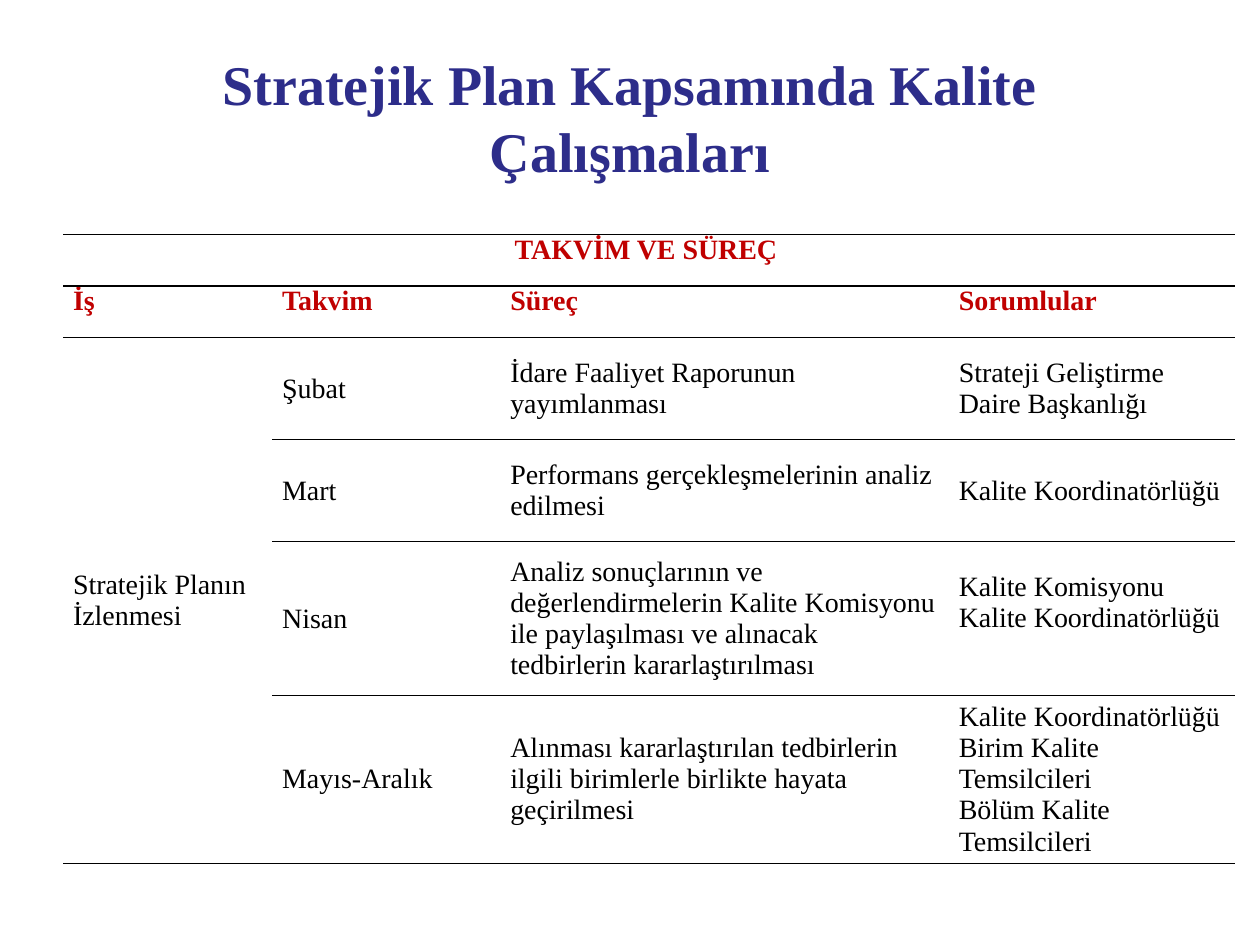
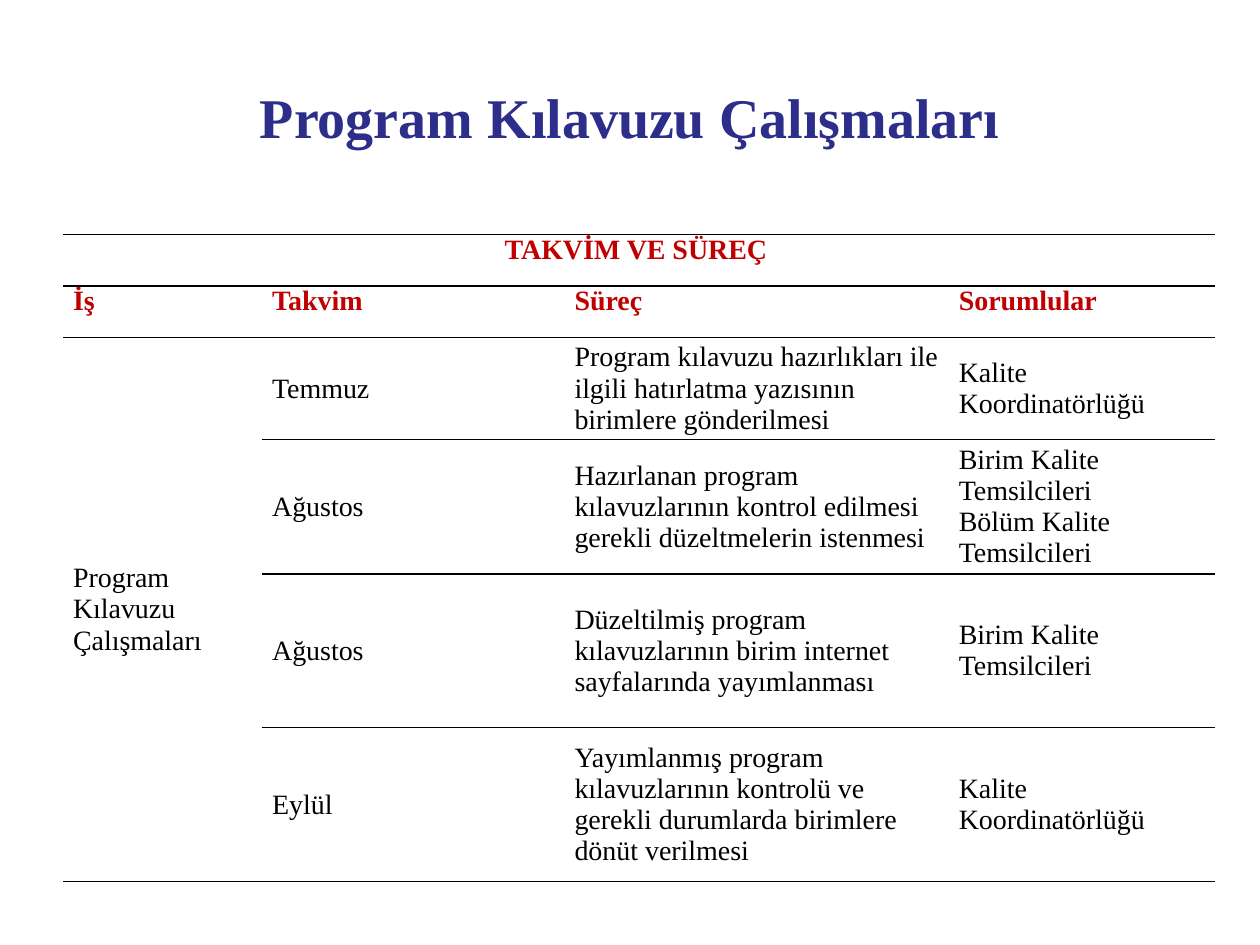
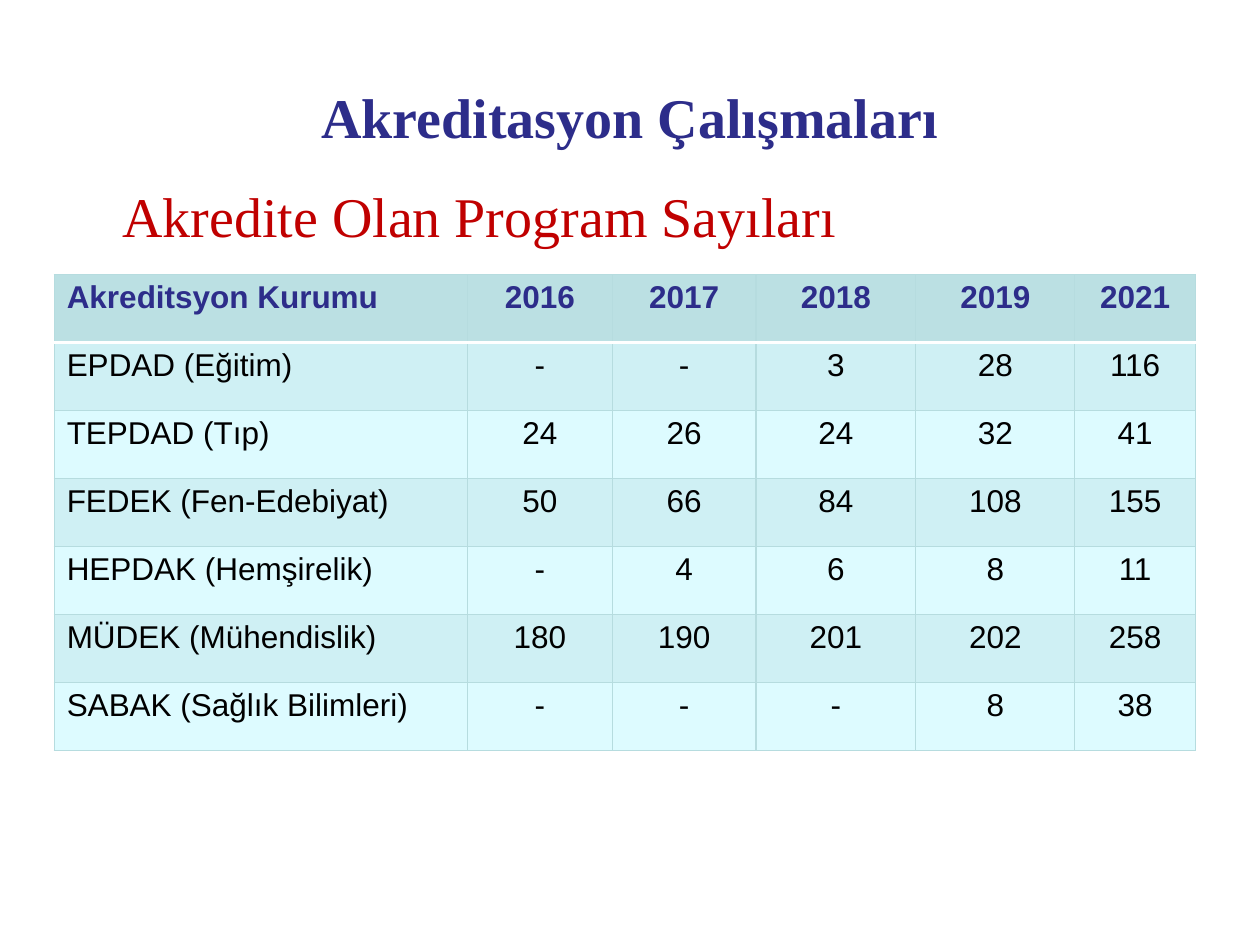
from lxml import etree
from pptx import Presentation, util as u
from pptx.dml.color import RGBColor
from pptx.enum import text as t
from pptx.oxml import ns

# Shared look
NAVY = RGBColor(0x2D, 0x2D, 0x8A)
RED = RGBColor(0xC0, 0x00, 0x00)
BLACK = RGBColor(0x00, 0x00, 0x00)
WHITE = RGBColor(0xFF, 0xFF, 0xFF)
TEAL = RGBColor(0xBB, 0xE0, 0xE3)
TEAL_LINE = RGBColor(0xB6, 0xDC, 0xDF)
BAND_DARK = RGBColor(0xCF, 0xF0, 0xF4)
BAND_LIGHT = RGBColor(0xDD, 0xFB, 0xFF)
SERIF, SANS = "Times New Roman", "Arial"
LEFT, CENTER, JUSTIFY = t.PP_ALIGN.LEFT, t.PP_ALIGN.CENTER, t.PP_ALIGN.JUSTIFY
TOP, MIDDLE = t.MSO_ANCHOR.TOP, t.MSO_ANCHOR.MIDDLE
SLIDE_W, SLIDE_H = 10, 7.5
MARGIN = 0.05 * SLIDE_W

# Content: calendars
CALENDAR_TITLE = "TAKVİM VE SÜREÇ "
CALENDAR_HEADS = ["İş", "Takvim ", "Süreç", "Sorumlular"]
CALENDAR_ROWS = [0.41, 0.41, 0.81, 0.81, 1.22, 1.22]
COORDINATOR = "Kalite Koordinatörlüğü"
UNIT_REPS = "Birim Kalite Temsilcileri"
DEPARTMENT_REPS = "Bölüm Kalite Temsilcileri"
CALENDARS = [
    dict(
        title="Stratejik Plan Kapsamında Kalite Çalışmaları",
        columns=[1.66, 1.81, 3.56, 2.27],
        job="Stratejik Planın İzlenmesi",
        raised="Nisan",
        steps=[
            ("Şubat", "İdare Faaliyet Raporunun yayımlanması",
             ["Strateji Geliştirme Daire Başkanlığı"]),
            ("Mart", "Performans gerçekleşmelerinin analiz edilmesi", [COORDINATOR]),
            ("Nisan", "Analiz sonuçlarının ve değerlendirmelerin Kalite Komisyonu ile "
             "paylaşılması ve alınacak tedbirlerin kararlaştırılması",
             ["Kalite Komisyonu", COORDINATOR]),
            ("Mayıs-Aralık", "Alınması kararlaştırılan tedbirlerin ilgili birimlerle "
             "birlikte hayata geçirilmesi",
             [COORDINATOR, UNIT_REPS, DEPARTMENT_REPS]),
        ],
    ),
    dict(
        title="Program Kılavuzu Çalışmaları",
        columns=[1.58, 2.4, 3.05, 2.11],
        job="Program Kılavuzu Çalışmaları",
        raised=None,
        steps=[
            ("Temmuz", "Program kılavuzu hazırlıkları ile ilgili hatırlatma yazısının "
             "birimlere gönderilmesi", [COORDINATOR]),
            ("Ağustos", "Hazırlanan program kılavuzlarının kontrol edilmesi gerekli "
             "düzeltmelerin istenmesi", [UNIT_REPS, DEPARTMENT_REPS]),
            ("Ağustos", "Düzeltilmiş program kılavuzlarının birim internet sayfalarında "
             "yayımlanması", [UNIT_REPS]),
            ("Eylül", "Yayımlanmış program kılavuzlarının kontrolü ve gerekli durumlarda "
             "birimlere dönüt verilmesi", [COORDINATOR]),
        ],
    ),
]

# Content: accreditation
ACCREDITATION_TITLE = "Akreditasyon Çalışmaları"
ACCREDITATION_SUBTITLE = "Akredite Olan Program Sayıları"
ACCREDITATION_COLUMNS = [3.28, 1.15, 1.14, 1.27, 1.26, 0.96]
ACCREDITATION = [
    ("Akreditsyon Kurumu", 2016, 2017, 2018, 2019, 2021),
    ("EPDAD (Eğitim)", "-", "-", 3, 28, 116),
    ("TEPDAD (Tıp)", 24, 26, 24, 32, 41),
    ("FEDEK (Fen-Edebiyat)", 50, 66, 84, 108, 155),
    ("HEPDAK (Hemşirelik)", "-", 4, 6, 8, 11),
    ("MÜDEK (Mühendislik)", 180, 190, 201, 202, 258),
    ("SABAK (Sağlık Bilimleri)", "-", "-", "-", 8, 38),
]


def write(frame, content, size=16, font=SERIF, color=BLACK, bold=False,
          align=LEFT, before=None):
    """Fill a text frame with one line or a list of lines."""
    lines = content if isinstance(content, list) else [content]
    frame.word_wrap = True
    for i, line in enumerate(lines):
        paragraph = frame.paragraphs[0] if i == 0 else frame.add_paragraph()
        paragraph.alignment = align
        paragraph.space_before = before
        run = paragraph.add_run()
        run.text = str(line)
        run.font.size, run.font.name, run.font.bold = u.Pt(size), font, bold
        run.font.color.rgb = color


def add_text(slide, content, left, top, width, height, anchor=TOP, inset=0.1, **style):
    box = slide.shapes.add_textbox(*map(u.Inches, (left, top, width, height)))
    frame = box.text_frame
    frame.vertical_anchor = anchor
    frame.margin_left = frame.margin_right = u.Inches(inset)
    write(frame, content, **style)


def add_titled_slide(deck, title):
    slide = deck.slides.add_slide(deck.slide_layouts[6])
    add_text(slide, title, MARGIN, 0.04 * SLIDE_H, SLIDE_W - 2 * MARGIN, SLIDE_H / 6,
             anchor=MIDDLE, inset=0.15, size=32, color=NAVY, bold=True, align=CENTER)
    return slide


def add_grid(slide, left, top, columns, rows):
    table = slide.shapes.add_table(
        len(rows), len(columns),
        *map(u.Inches, (left, top, sum(columns), sum(rows)))).table
    table.first_row = table.horz_banding = False
    for column, width in zip(table.columns, columns):
        column.width = u.Inches(width)
    for row, height in zip(table.rows, rows):
        row.height = u.Inches(height)
    return table


def set_borders(cell, **sides):
    """Draw sides L, R, T, B given as (colour, points); None hides one."""
    properties = cell._tc.get_or_add_tcPr()
    for i, side in enumerate("LRTB"):
        line = etree.Element(ns.qn(f"a:ln{side}"))
        if sides.get(side):
            color, points = sides[side]
            line.set("w", str(u.Pt(points)))
            fill = etree.SubElement(line, ns.qn("a:solidFill"))
            etree.SubElement(fill, ns.qn("a:srgbClr"), val=str(color))
        else:
            etree.SubElement(line, ns.qn("a:noFill"))
        properties.insert(i, line)


def add_calendar(deck, calendar):
    slide = add_titled_slide(deck, calendar["title"])
    table = add_grid(slide, MARGIN, 1.86, calendar["columns"], CALENDAR_ROWS)
    last_row = len(CALENDAR_ROWS) - 1
    table.cell(0, 0).merge(table.cell(0, len(CALENDAR_HEADS) - 1))
    table.cell(2, 0).merge(table.cell(last_row, 0))

    body = [(calendar["job"] if i == 0 else None, *step)
            for i, step in enumerate(calendar["steps"])]
    rule = (BLACK, 1)
    for r, values in enumerate([[CALENDAR_TITLE, None, None, None], CALENDAR_HEADS, *body]):
        for c, value in enumerate(values):
            cell = table.cell(r, c)
            cell.fill.background()
            inside_job = c == 0 and r > 2
            set_borders(cell, T=None if inside_job else rule,
                        B=None if inside_job and r < last_row else rule)
            if value is None:
                continue
            cell.margin_left, cell.margin_right = u.Inches(0.08), u.Inches(0.07)
            cell.margin_top = cell.margin_bottom = 0
            if r < 2:
                write(cell.text_frame, value, color=RED, bold=True,
                      align=JUSTIFY if r else CENTER)
            else:
                cell.vertical_anchor = MIDDLE
                write(cell.text_frame, value)
                if c == 3 and values[1] == calendar["raised"]:
                    cell.margin_bottom = u.Inches(0.26)


def add_accreditation(deck):
    slide = add_titled_slide(deck, ACCREDITATION_TITLE)
    add_text(slide, ACCREDITATION_SUBTITLE, MARGIN, 1.39, SLIDE_W - 2 * MARGIN, 0.58,
             inset=0.47, size=32, color=RED, before=u.Pt(6.4))
    table = add_grid(slide, 0.43, 2.18, ACCREDITATION_COLUMNS, [0.54] * len(ACCREDITATION))
    thin, thick = (TEAL_LINE, 0.75), (WHITE, 2)
    for r, values in enumerate(ACCREDITATION):
        head = r == 0
        for c, value in enumerate(values):
            cell = table.cell(r, c)
            cell.margin_top = u.Inches(0.04)
            cell.fill.solid()
            cell.fill.fore_color.rgb = TEAL if head else BAND_DARK if r % 2 else BAND_LIGHT
            set_borders(cell, L=thin, R=thin, T=thick if r == 1 else thin,
                        B=thick if head else thin)
            write(cell.text_frame, value, size=18, font=SANS, bold=head,
                  color=NAVY if head else BLACK, align=CENTER if c else LEFT)


def main():
    deck = Presentation()
    deck.slide_width, deck.slide_height = u.Inches(SLIDE_W), u.Inches(SLIDE_H)
    for calendar in CALENDARS:
        add_calendar(deck, calendar)
    add_accreditation(deck)
    deck.save("out.pptx")


if __name__ == "__main__":
    main()
